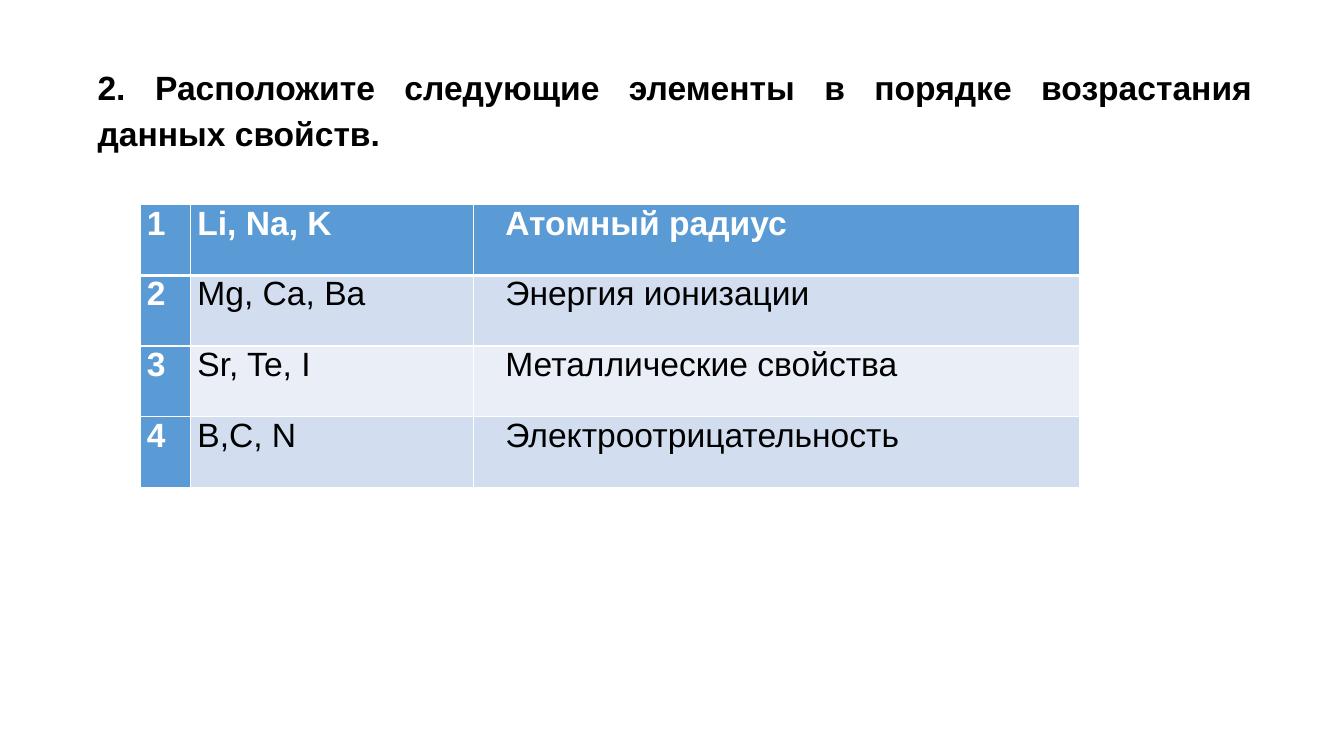
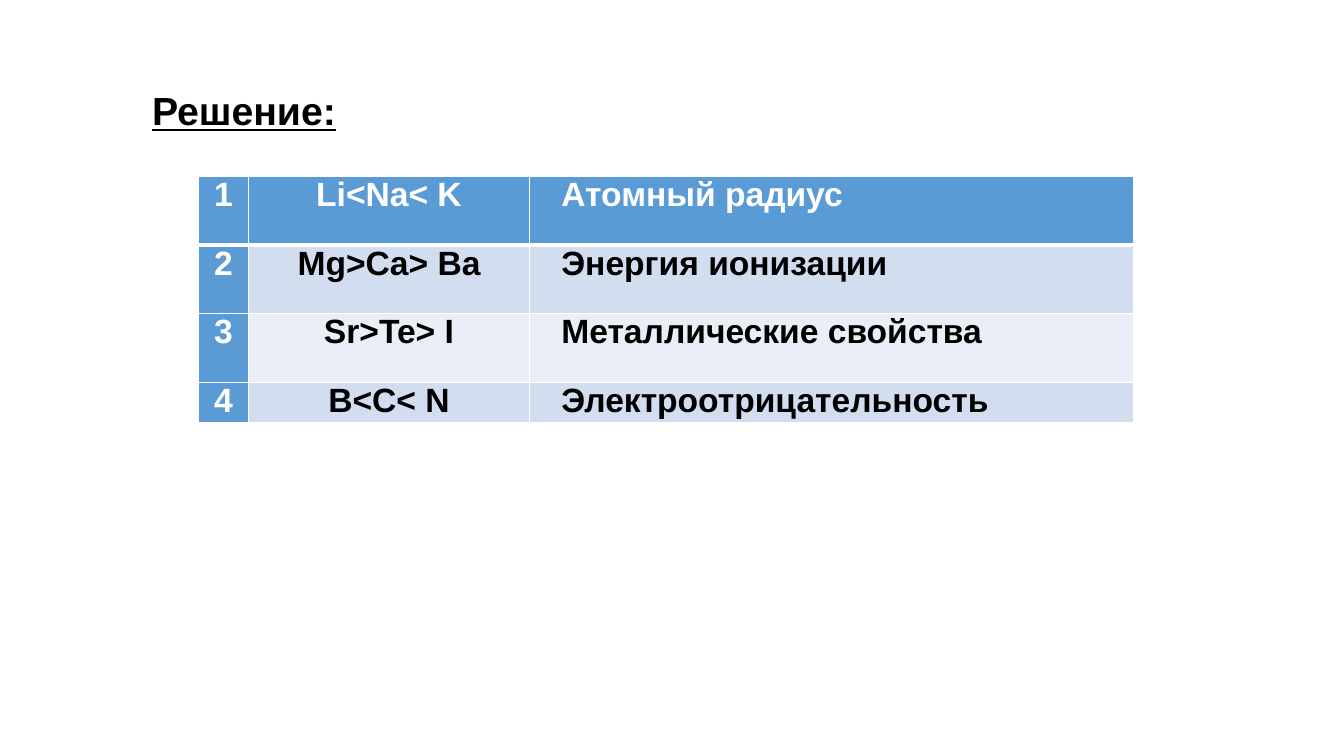
from dataclasses import dataclass

from lxml.etree import SubElement as Sub
from pptx import Presentation as Deck
from pptx.dml.color import RGBColor as Rgb
from pptx.enum.text import MSO_AUTO_SIZE as Fit, PP_ALIGN as Align
from pptx.oxml.ns import qn
from pptx.util import Pt


@dataclass(frozen=True)
class Theme:
    font: str = "Arial"
    ink: str = "000000"
    white: str = "FFFFFF"
    head: str = "5B9BD5"
    bands: tuple = ("EAEFF7", "D2DEEF")
    body: int = 24
    large: int = 28
    thin: int = 1
    thick: int = 3
    pad: int = 5
    inset: int = 18


class Board:
    def __init__(self, theme):
        self.theme = theme
        self.deck = Deck()
        self.deck.slide_width, self.deck.slide_height = Pt(960), Pt(540)
        self.slide = None

    def page(self):
        self.slide = self.deck.slides.add_slide(self.deck.slide_layouts[6])

    def run(self, para, text, size, color, bold=True, line=False):
        run = para.add_run()
        run.text = text
        font = run.font
        font.name, font.size = self.theme.font, Pt(size)
        font.bold, font.underline = bold, line
        font.color.rgb = Rgb.from_string(color)

    def title(self, text, box, size, align=Align.LEFT, space=1, wrap=True, line=False):
        frame = self.slide.shapes.add_textbox(*map(Pt, box)).text_frame
        frame.word_wrap = wrap
        frame.auto_size = Fit.SHAPE_TO_FIT_TEXT
        para = frame.paragraphs[0]
        para.alignment, para.line_spacing = align, space
        self.run(para, text, size, self.theme.ink, line=line)

    def edge(self, cell, side, width):
        props = cell._tc.get_or_add_tcPr()
        line = Sub(props, qn(f"a:ln{side}"), w=str(Pt(width)))
        fill = Sub(line, qn("a:solidFill"))
        Sub(fill, qn("a:srgbClr"), val=self.theme.white)

    def cell(self, cell, text, row, col, align, bold):
        theme = self.theme
        cell.margin_left = cell.margin_right = Pt(theme.pad)
        cell.margin_top = cell.margin_bottom = 0
        for side in "LRTB":
            rule = (side, row) in (("B", 0), ("T", 1))
            self.edge(cell, side, theme.thick if rule else theme.thin)
        head = row == 0 or col == 0
        cell.fill.solid()
        cell.fill.fore_color.rgb = Rgb.from_string(
            theme.head if head else theme.bands[row % 2])
        para = cell.text_frame.paragraphs[0]
        para.alignment = align
        if col == 2:
            para._p.get_or_add_pPr().set("marL", str(Pt(theme.inset)))
        self.run(para, text, theme.body, theme.white if head else theme.ink, head or bold)

    def table(self, left, top, cols, rows, data, aligns, bold):
        grid = self.slide.shapes.add_table(
            len(rows), len(cols), Pt(left), Pt(top), Pt(sum(cols)), Pt(sum(rows))).table
        grid.horz_banding = False
        grid.first_col = True
        for col, width in zip(grid.columns, cols):
            col.width = Pt(width)
        for r, (high, texts) in enumerate(zip(rows, data)):
            grid.rows[r].height = Pt(high)
            for c, (text, align) in enumerate(zip(texts, aligns)):
                self.cell(grid.cell(r, c), text, r, c, align, bold)


TRAITS = ("Атомный радиус", "Энергия ионизации",
          "Металлические свойства", "Электроотрицательность")


def lines(sets):
    return [(str(n), *pair) for n, pair in enumerate(zip(sets, TRAITS), 1)]


def main():
    theme = Theme()
    board = Board(theme)

    board.page()
    board.title("2. Расположите следующие элементы в порядке возрастания данных свойств.",
                (62.6, 39.6, 838.8, 74.2), theme.body, Align.JUSTIFY, 1.15)
    board.table(100, 146.2, (36, 202, 433.4), (50.5,) * 4,
                lines(("Li, Na, K", "Mg, Ca, Ba", "Sr, Te, I", "B,C, N")),
                (Align.JUSTIFY,) * 3, False)

    board.page()
    board.table(141.4, 126, (36.4, 200.2, 432), (49,) * 3 + (28.8,),
                lines(("Li<Na< K", "Mg>Ca> Ba", "Sr>Te> I", "B<C< N")),
                (Align.CENTER, Align.CENTER, Align.LEFT), True)
    board.title("Решение:", (101.5, 58.3, 147.6, 41), theme.large, wrap=False, line=True)

    board.deck.save("out.pptx")


if __name__ == "__main__":
    main()
